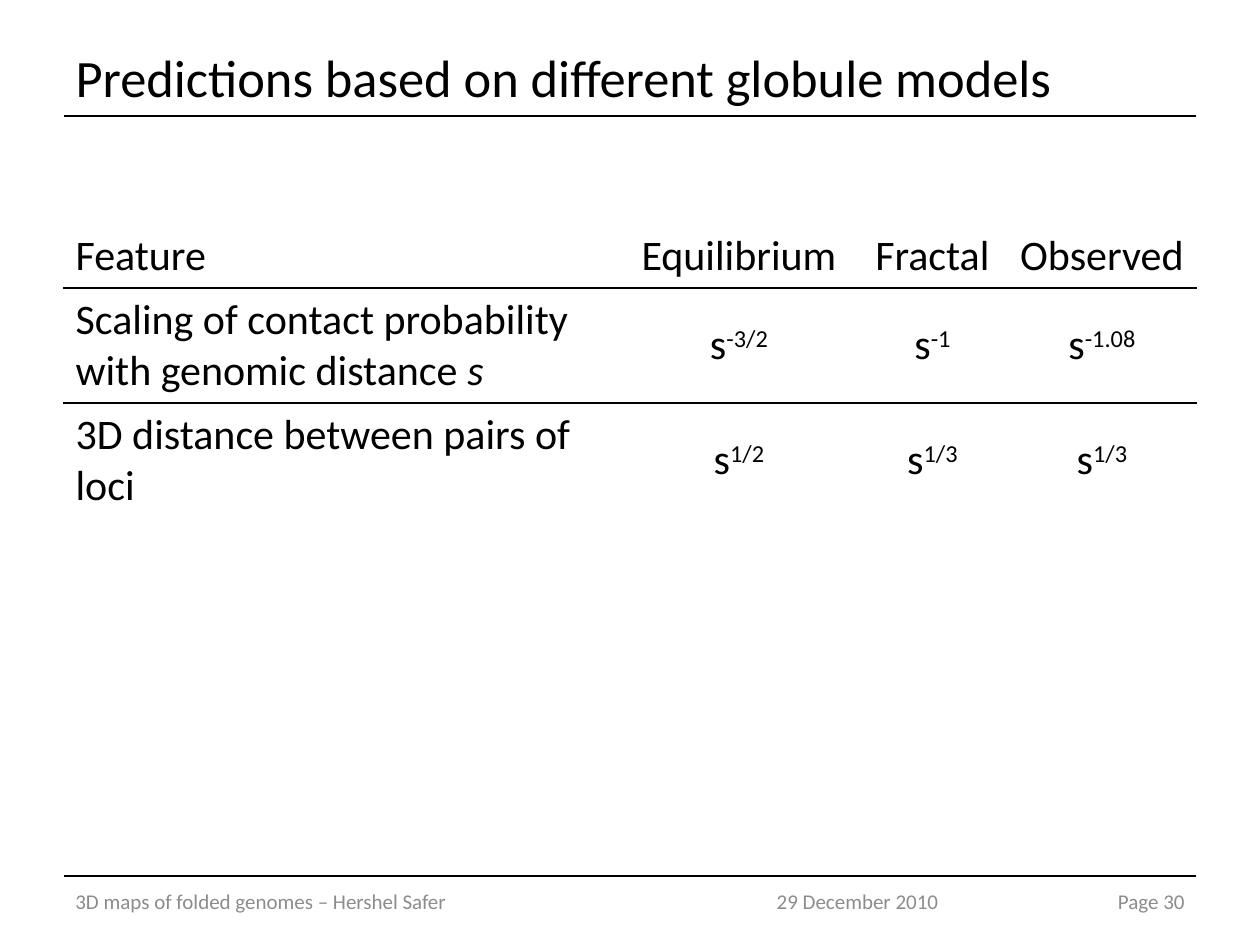
from lxml import etree
from pptx import Presentation
from pptx.dml.color import RGBColor
from pptx.enum.shapes import MSO_CONNECTOR
from pptx.enum.text import MSO_ANCHOR, PP_ALIGN
from pptx.oxml import parse_xml
from pptx.oxml.ns import nsdecls, qn
from pptx.util import Emu, Pt

LEFT, CENTER, RIGHT = PP_ALIGN.LEFT, PP_ALIGN.CENTER, PP_ALIGN.RIGHT
TOP, MIDDLE = MSO_ANCHOR.TOP, MSO_ANCHOR.MIDDLE
STRAIGHT = MSO_CONNECTOR.STRAIGHT
BLACK = RGBColor(0x00, 0x00, 0x00)
GRAY = RGBColor(0x8C, 0x8C, 0x8C)
FONT = "Calibri"
PLAIN_TABLE = "{2D5ABB26-0587-4C30-8999-92F81FD0307C}"
PX = 914400 // 126

TITLE = "Predictions based on different globule models"
HEADER = ["Feature", "Equilibrium", "Fractal", "Observed"]
FEATURES = [
    (("Scaling of contact probability with genomic distance ", "s"), ["-3/2", "-1", "-1.08"]),
    (("3D distance between pairs of loci",), ["1/2", "1/3", "1/3"]),
]
COLUMN_WIDTHS = [557, 238, 149, 190]
ROW_HEIGHTS = [64, 115, 115]
TABLE_LEFT, TABLE_TOP = 63, 224
RULE_LEFT, RULE_RIGHT = 64, 1196
RULE_TOPS = [116, 876]
FOOTER_TOP, FOOTER_HEIGHT = 876, 50
FOOTERS = [
    ("3D maps of folded genomes – Hershel Safer", 63, 528, LEFT),
    ("29 December 2010", 658, 399, CENTER),
    ("Page 30", 1066, 131, RIGHT),
]


def px(*lengths):
    return [Emu(length * PX) for length in lengths]


def style(run, size, color):
    run.font.name = FONT
    run.font.size = Pt(size)
    run.font.color.rgb = color


def write(frame, text, size, color, align):
    frame.text = text
    frame.word_wrap = True
    frame.vertical_anchor = MIDDLE
    frame.paragraphs[0].alignment = align
    style(frame.paragraphs[0].runs[0], size, color)


def fill_cell(cell, parts, align, anchor, underlined):
    paragraph = cell.text_frame.paragraphs[0]
    paragraph.alignment = align
    cell.vertical_anchor = anchor
    cell.fill.background()
    for part in parts:
        run = paragraph.add_run()
        run.text = part
        style(run, 24, BLACK)
    if underlined:
        border = parse_xml(
            f'<a:lnB {nsdecls("a")} w="12700"><a:solidFill>'
            f'<a:srgbClr val="{BLACK}"/></a:solidFill></a:lnB>'
        )
        cell._tc.get_or_add_tcPr().insert(0, border)
    return paragraph.runs


prs = Presentation()
prs.slide_width, prs.slide_height = px(1260, 945)
slide = prs.slides.add_slide(prs.slide_layouts[5])

for top in RULE_TOPS:
    rule = slide.shapes.add_connector(STRAIGHT, *px(RULE_LEFT, top, RULE_RIGHT, top))
    rule.line.color.rgb = BLACK
    rule.line.width = Pt(0.75)
    etree.SubElement(rule._element.spPr, qn("a:effectLst"))

title = slide.shapes.title
title.left, title.top, title.width, title.height = px(63, 38, 1134, 77)
write(title.text_frame, TITLE, 30, BLACK, LEFT)

table = slide.shapes.add_table(
    len(ROW_HEIGHTS), len(COLUMN_WIDTHS),
    *px(TABLE_LEFT, TABLE_TOP, sum(COLUMN_WIDTHS), sum(ROW_HEIGHTS)),
).table
table.first_row = table.horz_banding = False
table._tbl.tblPr.find(qn("a:tableStyleId")).text = PLAIN_TABLE
for column, width in zip(table.columns, px(*COLUMN_WIDTHS)):
    column.width = width
for row, height in zip(table.rows, px(*ROW_HEIGHTS)):
    row.height = height

for col, heading in enumerate(HEADER):
    fill_cell(table.cell(0, col), [heading], CENTER if col else LEFT, TOP, True)
for row, (feature, exponents) in enumerate(FEATURES, 1):
    underlined = row < len(FEATURES)
    for symbol in fill_cell(table.cell(row, 0), feature, LEFT, TOP, underlined)[1:]:
        symbol.font.italic = True
    for col, exponent in enumerate(exponents, 1):
        base, power = fill_cell(table.cell(row, col), ["s", exponent], CENTER, MIDDLE, underlined)
        power.font._element.set("baseline", "30000")

for text, left, width, align in FOOTERS:
    footer = slide.shapes.add_textbox(*px(left, FOOTER_TOP, width, FOOTER_HEIGHT))
    write(footer.text_frame, text, 12, GRAY, align)

prs.save("out.pptx")
